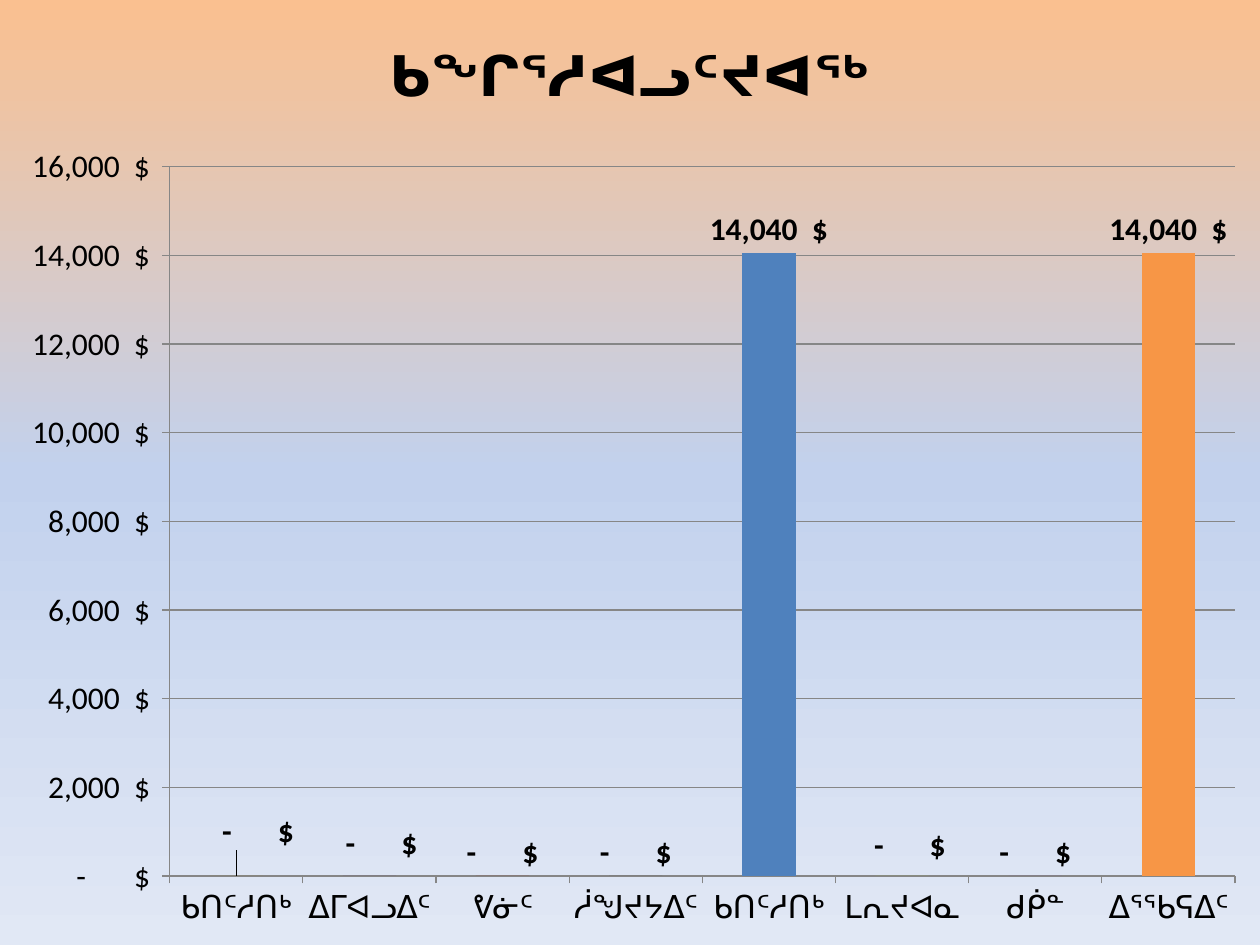
"""Build a slide with a column chart on a gradient background."""
from copy import deepcopy

from pptx import Presentation
from pptx import util as u
from pptx.chart.data import CategoryChartData
from pptx.dml.color import RGBColor
from pptx.enum import chart as ch
from pptx.oxml import parse_xml
from pptx.oxml.ns import nsdecls

BLACK = RGBColor(0x00, 0x00, 0x00)
GRAY = RGBColor(0x86, 0x86, 0x86)
BLUE = RGBColor(0x4F, 0x81, 0xBD)
POINT_COLORS = {
    0: RGBColor(0x94, 0x8A, 0x54),
    1: RGBColor(0x60, 0x4A, 0x7B),
    2: RGBColor(0x95, 0x37, 0x35),
    3: RGBColor(0x59, 0x59, 0x59),
    5: RGBColor(0x9B, 0xBB, 0x59),
    6: RGBColor(0x80, 0x64, 0xA2),
    7: RGBColor(0xF7, 0x96, 0x46),
}
BACKGROUND = [
    (0, RGBColor(0xFA, 0xC0, 0x90)),
    (0.5, RGBColor(0xC2, 0xD1, 0xED)),
    (1, RGBColor(0xE1, 0xE8, 0xF5)),
]
WIDTH, HEIGHT = u.Pt(720), u.Pt(540)
MONEY = r'_ * #,##0_)\ "$"_ ;_ * \(#,##0\)\ "$"_ ;_ * "-"??_)\ "$"_ ;_ @_ '
CATEGORIES = ["ᑲᑎᑦᓱᑎᒃ", "ᐃᒥᐊᓗᐃᑦ", "ᕓᓃᑦ", "ᓲᖑᔪᔭᐃᑦ",
              "ᑲᑎᑦᓱᑎᒃ", "ᒪᕆᔪᐊᓇ", "ᑯᑮᓐ", "ᐃᕐᖃᕋᐃᑦ"]
VALUES = [0, 0, 0, 0, 14040, 0, 0, 14040]
LABEL_SHIFTS = {0: (12.5, -12), 1: (7, -5), 2: (0, 0.5), 5: (4.5, -3.5)}


def layout_xml(modes="", **lengths):
    values = "".join(
        f'<c:{k} val="{u.Pt(v) / (WIDTH if k in "xw" else HEIGHT)}"/>'
        for k, v in lengths.items())
    return parse_xml(f'<c:layout {nsdecls("c")}><c:manualLayout>{modes}{values}'
                     "</c:manualLayout></c:layout>")


def set_font(font, **values):
    for name, value in values.items():
        setattr(font, name, value)
    font.color.rgb = BLACK


prs = Presentation()
prs.slide_width, prs.slide_height = WIDTH, HEIGHT
s = prs.slides.add_slide(prs.slide_layouts[6])

fill = s.background.fill
fill.gradient()
fill.gradient_angle = 270
stop_list = s._element.xpath(".//a:gsLst")[0]
stop_list.append(deepcopy(stop_list[-1]))
for stop, (position, color) in zip(fill.gradient_stops, BACKGROUND):
    stop.position = position
    stop.color.rgb = color

data = CategoryChartData()
data.categories = CATEGORIES
data.add_series("Series 1", VALUES)
chart = s.shapes.add_chart(ch.XL_CHART_TYPE.COLUMN_CLUSTERED, 0, 0,
                           WIDTH, HEIGHT, data).chart
chart.has_legend = False
set_font(chart.font, name="Calibri", size=u.Pt(18))

chart.has_title = True
chart.chart_title.include_in_layout = False
p = chart.chart_title.text_frame.paragraphs[0]
r = p.add_run()
r.text = "ᑲᖏᕐᓱᐊᓗᑦᔪᐊᖅ"
set_font(r.font, name="Calibri", size=u.Pt(32), bold=True)

plot_area = chart._chartSpace.xpath(".//c:plotArea")[0]
for old in plot_area.xpath("./c:layout"):
    plot_area.remove(old)
modes = '<c:layoutTarget val="inner"/><c:xMode val="edge"/><c:yMode val="edge"/>'
plot_area.insert(0, layout_xml(modes, x=97, y=95.2, w=608.8, h=405.4))

axis = chart.value_axis
axis.minimum_scale, axis.maximum_scale, axis.major_unit = 0, 16000, 2000
axis.has_major_gridlines = True
axis.tick_labels.number_format = MONEY
axis.tick_labels.number_format_is_linked = False
for line in (axis.format.line, axis.major_gridlines.format.line,
             chart.category_axis.format.line):
    line.color.rgb = GRAY
    line.width = u.Pt(0.75)
for axis in (chart.value_axis, chart.category_axis):
    axis.major_tick_mark = ch.XL_TICK_MARK.OUTSIDE

plot = chart.plots[0]
plot.gap_width = 150
plot.vary_by_categories = False
series = plot.series[0]
series.format.fill.solid()
series.format.fill.fore_color.rgb = BLUE
for i, color in POINT_COLORS.items():
    fill = series.points[i].format.fill
    fill.solid()
    fill.fore_color.rgb = color

labels = series.data_labels
labels.show_value = True
labels.number_format = MONEY
labels.number_format_is_linked = False
labels.position = ch.XL_LABEL_POSITION.OUTSIDE_END
set_font(labels.font, name="Calibri", size=u.Pt(18), bold=True)
for i, (dx, dy) in LABEL_SHIFTS.items():
    label = series.points[i].data_label
    set_font(label.font, name="Calibri", size=u.Pt(18), bold=True)
    label.position = ch.XL_LABEL_POSITION.OUTSIDE_END
    element = series._element.xpath(f".//c:dLbl[c:idx/@val='{i}']")[0]
    element.insert(1, layout_xml(x=dx, y=dy))
    number_format = deepcopy(series._element.xpath("./c:dLbls/c:numFmt")[0])
    element.insert(2, number_format)

prs.save("out.pptx")
